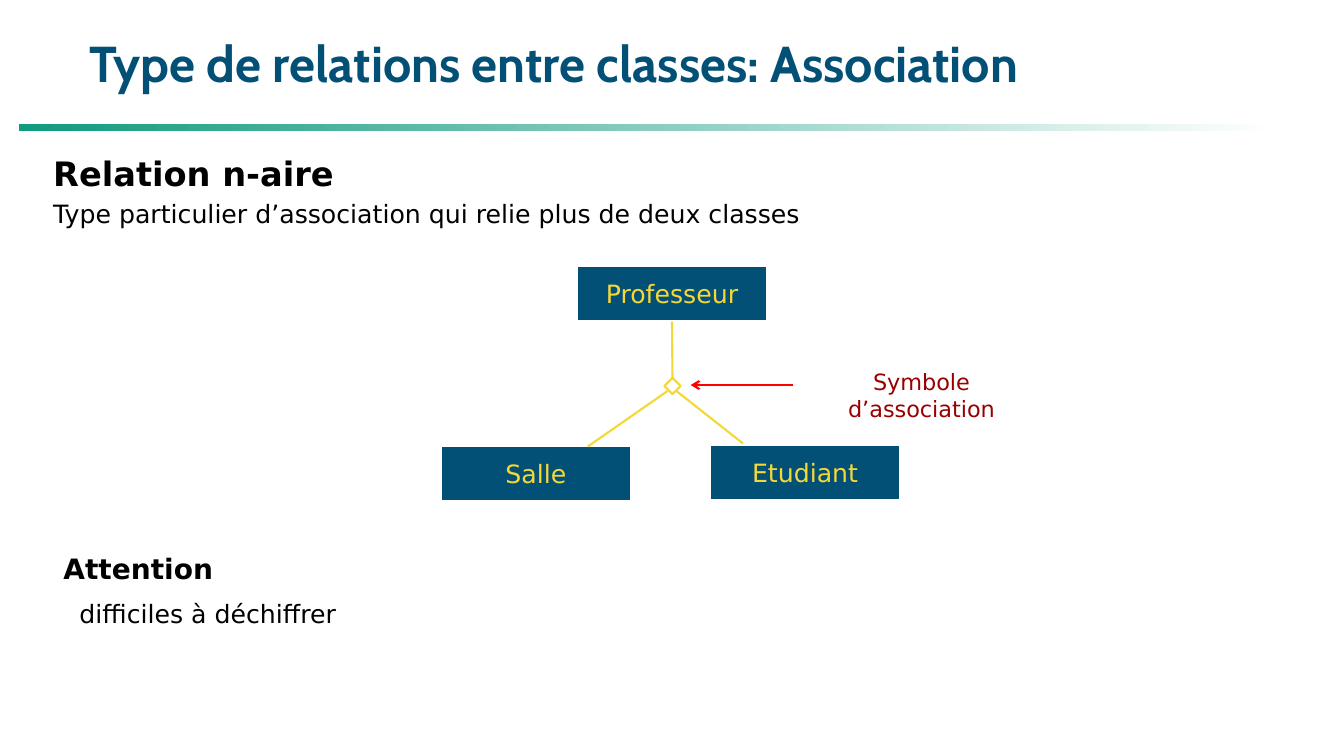
from dataclasses import dataclass

from lxml import etree
from pptx import Presentation
from pptx.dml.color import RGBColor
from pptx.enum.shapes import MSO_CONNECTOR, MSO_SHAPE
from pptx.enum.text import MSO_ANCHOR, PP_ALIGN
from pptx.oxml.ns import qn
from pptx.util import Inches, Pt


@dataclass(frozen=True)
class Theme:
    blue: str = "035077"
    yellow: str = "F5D736"
    green: str = "119A7E"
    white: str = "FFFFFF"
    black: str = "000000"
    dark_red: str = "990000"
    red: str = "FF0000"
    title_font: str = "Cabin"
    body_font: str = "DejaVu Sans"
    title_size: int = 36
    heading_size: int = 24
    warning_size: int = 20
    body_size: int = 18
    note_size: int = 16
    line_width: float = 1.5


THEME = Theme()


def set_all(target, values):
    for attribute, value in values.items():
        setattr(target, attribute, value)


def write(paragraph, text, size, color=THEME.black, font=THEME.body_font, bold=False, **layout):
    run = paragraph.add_run()
    run.text = text
    set_all(run.font, {"name": font, "size": Pt(size), "bold": bold})
    run.font.color.rgb = RGBColor.from_string(color)
    set_all(paragraph, layout)


def add_text_frame(slide, box, **layout):
    frame = slide.shapes.add_textbox(*map(Inches, box)).text_frame
    set_all(frame, {"word_wrap": True, **layout})
    return frame


def add_outlined(slide, preset, box, line_color, fill_color=None):
    shape = slide.shapes.add_shape(preset, *map(Inches, box))
    shape.shadow.inherit = False
    if fill_color:
        shape.fill.solid()
        shape.fill.fore_color.rgb = RGBColor.from_string(fill_color)
    else:
        shape.fill.background()
    shape.line.color.rgb = RGBColor.from_string(line_color)
    shape.line.width = Pt(THEME.line_width)
    return shape


def add_line(slide, start, end, color, arrow=False):
    line = slide.shapes.add_connector(MSO_CONNECTOR.STRAIGHT, *map(Inches, start + end))
    line.line.color.rgb = RGBColor.from_string(color)
    line.line.width = Pt(THEME.line_width)
    if arrow:
        etree.SubElement(line.line._get_or_add_ln(), qn("a:tailEnd"), type="arrow")
    etree.SubElement(line._element.spPr, qn("a:effectLst"))
    return line


def add_header(slide, box):
    left, top, width, height = box
    # Gradient rule under the title
    rule = slide.shapes.add_shape(
        MSO_SHAPE.RECTANGLE, Inches(left), Inches(top + height - 0.07), Inches(12.46), Inches(0.07))
    rule.shadow.inherit = False
    rule.line.fill.background()
    rule.fill.gradient()
    rule.fill.gradient_angle = 0
    for stop, color in zip(rule.fill.gradient_stops, (THEME.green, THEME.white)):
        stop.color.rgb = RGBColor.from_string(color)
    # Title
    title = add_text_frame(
        slide, (left + 0.7, top + 0.42, width - 0.7, 0.47), vertical_anchor=MSO_ANCHOR.MIDDLE,
        margin_left=0, margin_top=0, margin_right=0, margin_bottom=0)
    write(title.paragraphs[0], "Type de relations entre classes: Association", THEME.title_size,
          THEME.blue, THEME.title_font, bold=True, line_spacing=0.9)


def add_definition(slide, box):
    definition = add_text_frame(slide, box)
    write(definition.paragraphs[0], "Relation n-aire", THEME.heading_size, bold=True)
    write(definition.add_paragraph(), "Type particulier d’association qui relie plus de deux classes",
          THEME.body_size, space_before=Pt(3.6))


def add_class_diagram(slide, box):
    left, top = box[:2]
    class_width, class_height = 1.89, 0.55
    # Class boxes
    classes = {}
    for name, dx, dy in (("Professeur", 1.35, 0), ("Etudiant", 2.67, 1.77), ("Salle", 0, 1.78)):
        classes[name] = add_outlined(
            slide, MSO_SHAPE.RECTANGLE, (left + dx, top + dy, class_width, class_height),
            THEME.white, THEME.blue)
        frame = classes[name].text_frame
        set_all(frame, {"word_wrap": False, "vertical_anchor": MSO_ANCHOR.MIDDLE})
        write(frame.paragraphs[0], name, THEME.body_size, THEME.yellow, alignment=PP_ALIGN.CENTER)

    # Association symbol and its branches
    center_x, center_y, side = left + 2.3, top + 1.19, 0.16
    association = add_outlined(
        slide, MSO_SHAPE.DIAMOND, (center_x - side / 2, center_y - side / 2, side, side), THEME.yellow)
    trunk = add_line(slide, (center_x, center_y - side / 2), (center_x, top + class_height), THEME.yellow)
    trunk.begin_connect(association, 0)
    trunk.end_connect(classes["Professeur"], 2)
    for start_dx, end_dx, end_y in ((-0.05, -0.84, 1.79), (0.04, 0.7, 1.76)):
        add_line(slide, (center_x + start_dx, center_y + 0.05), (center_x + end_dx, top + end_y),
                 THEME.yellow)

    # Note pointing at the symbol
    add_line(slide, (center_x + 1.2, top + 1.18), (center_x + 0.18, top + 1.18), THEME.red, arrow=True)
    note = add_text_frame(slide, (left + 3.43, top + 0.96, 2.68, 0.64))
    write(note.paragraphs[0], "Symbole d’association", THEME.note_size, THEME.dark_red,
          alignment=PP_ALIGN.CENTER)


def add_warning(slide, box):
    warning = add_text_frame(slide, box, vertical_anchor=MSO_ANCHOR.MIDDLE)
    write(warning.paragraphs[0], "Attention", THEME.warning_size, bold=True)
    detail = warning.add_paragraph()
    detail._p.get_or_add_pPr().set("marL", str(Inches(0.16)))
    write(detail, "difficiles à déchiffrer", THEME.body_size, space_before=Pt(9.4))


def main():
    presentation = Presentation()
    set_all(presentation, {"slide_width": Inches(13.33), "slide_height": Inches(7.5)})
    slide = presentation.slides.add_slide(presentation.slide_layouts[6])
    add_header(slide, (0.19, 0, 13.14, 1.3))
    add_definition(slide, (0.43, 1.47, 7.64, 1.17))
    add_class_diagram(slide, (4.37, 2.64, 6.11, 2.33))
    add_warning(slide, (0.53, 5.42, 8.61, 0.87))
    presentation.save("out.pptx")


if __name__ == "__main__":
    main()
